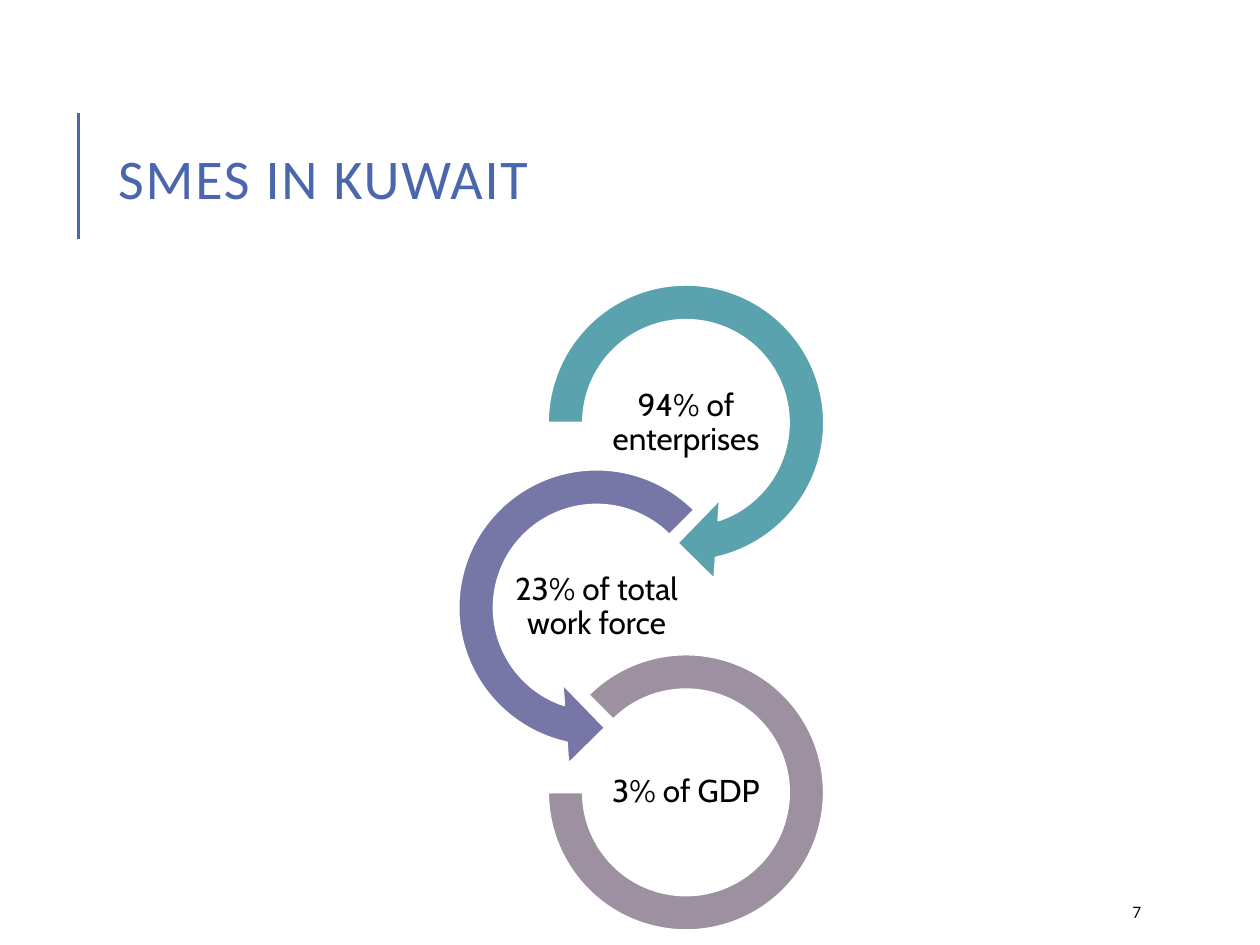
from pptx import Presentation
from pptx import util as u
from pptx.dml.color import RGBColor
from pptx.enum import shapes, text
from pptx.oxml.ns import qn
from lxml import etree

TITLE = "SMES IN KUWAIT"
PAGE_NUMBER = "7"
BLUE, WHITE, BLACK, DARK = "4A66AC", "FFFFFF", "000000", "0D0D0D"
KIND = shapes.MSO_SHAPE

# label, ring shape, colour, diameter, centre x, adjustments
RINGS = [
    ("94% of enterprises", KIND.CIRCULAR_ARROW, "5AA2AE", 183.6, 392,
     (0.11, 11.42, 45, 108, 0.125)),
    ("23% of total work force", KIND.LEFT_CIRCULAR_ARROW, "7677A6", 183.6, 340.9,
     (0.11, 11.42, 63, 189, 0.125)),
    ("3% of GDP", KIND.BLOCK_ARC, "9D90A0", 157.7, 392,
     (135, 108, 0.127)),
]
FIRST_CENTRE_Y, RING_STEP = 241.6, 105.6
LABEL_WIDTH, LABEL_HEIGHT = 102.2, 51.1


def colour(value):
    return RGBColor.from_string(value)


def centred(x, y, width, height):
    """Left, top, width and height of a box centred on x, y."""
    return x - width / 2, y - height / 2, width, height


def add_text(page, words, area, size, font, ink, align=text.PP_ALIGN.LEFT,
             line_spacing=1.0, inset=None, letter_spacing=None):
    box = page.shapes.add_textbox(*map(u.Pt, area))
    frame = box.text_frame
    frame.word_wrap = True
    frame.vertical_anchor = text.MSO_ANCHOR.MIDDLE
    if inset is not None:
        frame.margin_left = frame.margin_right = u.Pt(inset)
        frame.margin_top = frame.margin_bottom = u.Pt(inset)
    para = frame.paragraphs[0]
    para.alignment = align
    para.line_spacing = line_spacing
    span = para.add_run()
    span.text = words
    span.font.size = u.Pt(size)
    span.font.name = font
    span.font.color.rgb = colour(ink)
    if letter_spacing is not None:
        span.font._element.set("spc", str(letter_spacing * 100))


def add_ring(page, kind, area, fill, adjustments):
    ring = page.shapes.add_shape(kind, *map(u.Pt, area))
    ring.shadow.inherit = False
    for index, value in enumerate(adjustments):
        ring.adjustments[index] = value
    ring.fill.solid()
    ring.fill.fore_color.rgb = colour(fill)
    ring.line.color.rgb = colour(WHITE)
    ring.line.width = u.Pt(1.25)


def add_rule(page, x, top, bottom):
    rule = page.shapes.add_connector(
        shapes.MSO_CONNECTOR.STRAIGHT, *map(u.Pt, (x, bottom, x, top)))
    rule.line.color.rgb = colour(BLUE)
    rule.line.width = u.Pt(1.5)
    etree.SubElement(rule._element.spPr, qn("a:effectLst"))


def main():
    deck = Presentation()
    deck.slide_width, deck.slide_height = u.Pt(720), u.Pt(540)
    page = deck.slides.add_slide(deck.slide_layouts[6])

    add_rule(page, 44.8, 64.8, 136.8)
    add_text(page, TITLE, (60.5, 46, 573.8, 118), 32, "Calibri", BLUE,
             line_spacing=0.8, letter_spacing=1)

    for index, (label, kind, fill, diameter, x, adjustments) in enumerate(RINGS):
        y = FIRST_CENTRE_Y + index * RING_STEP
        add_ring(page, kind, centred(x, y, diameter, diameter), fill, adjustments)
        add_text(page, label, centred(x, y, LABEL_WIDTH, LABEL_HEIGHT), 18,
                 "Cabin", BLACK, align=text.PP_ALIGN.CENTER,
                 line_spacing=0.9, inset=0.9)

    add_text(page, PAGE_NUMBER, (640, 509.8, 57.6, 21.6), 10, "Calibri", DARK)
    deck.save("out.pptx")


if __name__ == "__main__":
    main()
